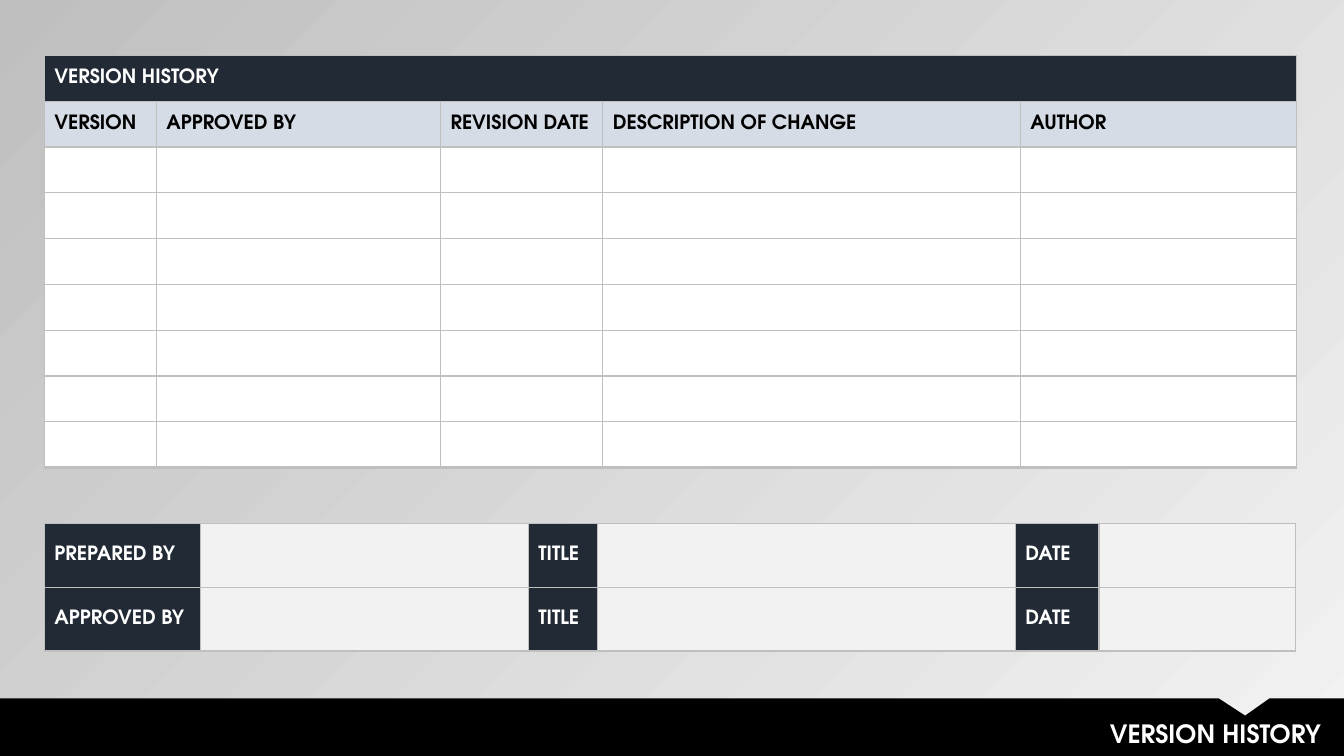
from dataclasses import dataclass

from lxml import etree
from pptx import Presentation
from pptx.dml.color import RGBColor
from pptx.enum.text import MSO_ANCHOR, MSO_AUTO_SIZE, PP_ALIGN
from pptx.oxml.ns import qn
from pptx.slide import Slide
from pptx.table import _Cell
from pptx.util import Inches, Pt

MIDDLE = MSO_ANCHOR.MIDDLE
RIGHT = PP_ALIGN.RIGHT
FIT_SHAPE = MSO_AUTO_SIZE.SHAPE_TO_FIT_TEXT

FONT = "TeX Gyre Adventor"
BLACK = RGBColor(0x00, 0x00, 0x00)
WHITE = RGBColor(0xFF, 0xFF, 0xFF)
NAVY = RGBColor(0x22, 0x2A, 0x35)
PALE_BLUE = RGBColor(0xD6, 0xDC, 0xE5)
PALE_GREY = RGBColor(0xF2, 0xF2, 0xF2)
GREY = RGBColor(0xBF, 0xBF, 0xBF)

SLIDE_WIDTH, SLIDE_HEIGHT = 13.33, 7.5
BAND_TOP = 6.93
TABLE_LEFT = 0.44
BLANK_ROWS = 7


@dataclass(frozen=True)
class CellLook:
    text: str
    fill: RGBColor
    color: RGBColor = WHITE


@dataclass(frozen=True)
class TableLayout:
    top: float
    height: float
    widths: list[float]
    rows: list[list[CellLook]]
    paragraph_gap: float = 0


def signature_row(action: str) -> list[CellLook]:
    blank = CellLook("", PALE_GREY)
    return [look for label in (action, "TITLE", "DATE")
            for look in (CellLook(label, NAVY), blank)]


HEADINGS = ["VERSION", "APPROVED BY", "REVISION DATE", "DESCRIPTION OF CHANGE", "AUTHOR"]
HISTORY = TableLayout(
    top=0.55,
    height=4.09,
    widths=[1.11, 2.82, 1.61, 4.14, 2.74],
    rows=[
        [CellLook("VERSION HISTORY", NAVY)] + [CellLook("", NAVY)] * (len(HEADINGS) - 1),
        [CellLook(heading, PALE_BLUE, BLACK) for heading in HEADINGS],
    ] + [[CellLook("", WHITE)] * len(HEADINGS)] * BLANK_ROWS,
    paragraph_gap=3,
)
SIGNATURES = TableLayout(
    top=5.19,
    height=1.27,
    widths=[1.55, 3.25, 0.69, 4.14, 0.83, 1.95],
    rows=[signature_row("PREPARED BY"), signature_row("APPROVED BY")],
)


def set_borders(cell: _Cell, bottom_width: float) -> None:
    properties = cell._tc.get_or_add_tcPr()
    widths = {"a:lnL": 1, "a:lnR": 1, "a:lnT": 1, "a:lnB": bottom_width}
    for index, (tag, width) in enumerate(widths.items()):
        line = etree.Element(qn(tag), w=str(Pt(width)))
        fill = etree.SubElement(line, qn("a:solidFill"))
        etree.SubElement(fill, qn("a:srgbClr"), val=str(GREY))
        properties.insert(index, line)


def format_cell(cell: _Cell, look: CellLook, paragraph_gap: float) -> None:
    cell.fill.solid()
    cell.fill.fore_color.rgb = look.fill
    cell.vertical_anchor = MIDDLE
    cell.margin_left, cell.margin_right = Inches(0.1), Inches(0.07)
    cell.margin_top = cell.margin_bottom = 0
    if not look.text:
        return
    cell.text_frame.text = look.text
    paragraph = cell.text_frame.paragraphs[0]
    paragraph.space_before = paragraph.space_after = Pt(paragraph_gap)
    font = paragraph.runs[0].font
    font.name, font.size, font.bold = FONT, Pt(14), True
    font.color.rgb = look.color


def add_grid(slide: Slide, layout: TableLayout):
    row_count = len(layout.rows)
    table = slide.shapes.add_table(
        row_count, len(layout.widths), Inches(TABLE_LEFT), Inches(layout.top),
        Inches(sum(layout.widths)), Inches(layout.height)).table
    table.first_row = table.horz_banding = False
    for column, width in zip(table.columns, layout.widths):
        column.width = Inches(width)
    for index, (row, looks) in enumerate(zip(table.rows, layout.rows)):
        row.height = Inches(layout.height / row_count)
        bottom_width = 2.25 if index == row_count - 1 else 1
        for cell, look in zip(row.cells, looks):
            format_cell(cell, look, layout.paragraph_gap)
            set_borders(cell, bottom_width)
    return table


def set_background(slide: Slide) -> None:
    fill = slide.background.fill
    fill.gradient()
    fill.gradient_angle = 135
    for stop, color in zip(fill.gradient_stops, (PALE_GREY, GREY)):
        stop.color.rgb = color


def add_footer(slide: Slide) -> None:
    """Draw the notched band and set the title on it."""
    outline = [(12.09, BAND_TOP), (12.35, 7.1), (12.59, BAND_TOP), (SLIDE_WIDTH, BAND_TOP),
               (SLIDE_WIDTH, SLIDE_HEIGHT), (0, SLIDE_HEIGHT)]
    builder = slide.shapes.build_freeform(0, Inches(BAND_TOP))
    builder.add_line_segments([(Inches(x), Inches(y)) for x, y in outline], close=True)
    band = builder.convert_to_shape()
    band.shadow.inherit = False
    band.fill.solid()
    band.fill.fore_color.rgb = BLACK
    band.line.fill.background()

    title = slide.shapes.title
    title.element.addprevious(band.element)
    title.left, title.top = Inches(4.14), Inches(7.08)
    title.width, title.height = Inches(9.06), Inches(0.4)
    title.text_frame.text = "VERSION HISTORY"
    title.text_frame.word_wrap = True
    title.text_frame.auto_size = FIT_SHAPE
    paragraph = title.text_frame.paragraphs[0]
    paragraph.alignment = RIGHT
    font = paragraph.runs[0].font
    font.name, font.size, font.bold = FONT, Pt(18), True
    font.color.rgb = WHITE


def main() -> None:
    presentation = Presentation()
    presentation.slide_width = Inches(SLIDE_WIDTH)
    presentation.slide_height = Inches(SLIDE_HEIGHT)
    slide = presentation.slides.add_slide(presentation.slide_layouts.get_by_name("Title Only"))
    set_background(slide)
    add_footer(slide)
    history = add_grid(slide, HISTORY)
    history.cell(0, 0).merge(history.cell(0, len(HEADINGS) - 1))
    add_grid(slide, SIGNATURES)
    presentation.save("out.pptx")


if __name__ == "__main__":
    main()
